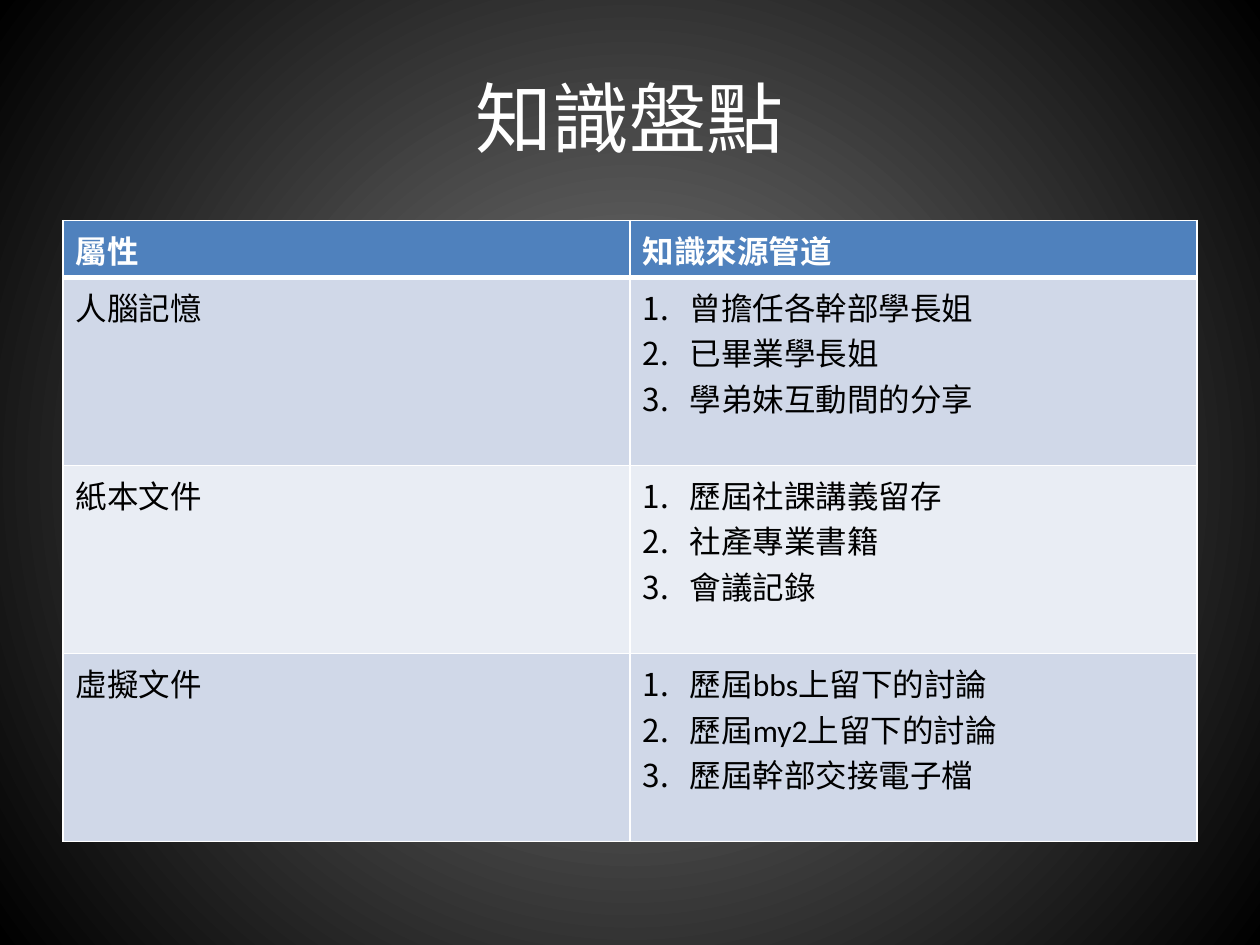
from lxml.etree import SubElement
from pptx import Presentation
from pptx.dml.color import RGBColor
from pptx.enum.text import MSO_ANCHOR as Anchor, PP_ALIGN as Align
from pptx.oxml import parse_xml
from pptx.oxml.ns import nsdecls, qn
from pptx.util import Pt

FONT = "Calibri"
WHITE, BLACK = "FFFFFF", "000000"
HEADER_FILL = "4F81BD"
BAND_FILLS = ["D0D8E8", "E9EDF4"]
HEADER_HEIGHT = 32.5
LIST_INDENT = 27

HEADERS = ["屬性", "知識來源管道"]
SOURCES = [
    ("人腦記憶", ["曾擔任各幹部學長姐", "已畢業學長姐", "學弟妹互動間的分享"]),
    ("紙本文件", ["歷屆社課講義留存", "社產專業書籍", "會議記錄"]),
    ("虛擬文件", ["歷屆bbs上留下的討論", "歷屆my2上留下的討論", "歷屆幹部交接電子檔"]),
]


def color(value):
    return RGBColor.from_string(value)


def add_run(paragraph, text, size, font_color, bold=False):
    run = paragraph.add_run()
    run.text = text
    run.font.name = FONT
    run.font.size = Pt(size)
    run.font.bold = bold
    run.font.color.rgb = color(font_color)


def set_background(slide, inner, outer):
    """Fill the background with a circular gradient from the centre."""
    background = parse_xml(
        f'<p:bg {nsdecls("p", "a")}><p:bgPr><a:gradFill rotWithShape="1"><a:gsLst>'
        f'<a:gs pos="0"><a:srgbClr val="{inner}"/></a:gs>'
        f'<a:gs pos="100000"><a:srgbClr val="{outer}"/></a:gs></a:gsLst>'
        '<a:path path="circle"><a:fillToRect l="50000" t="50000" r="50000" b="50000"/></a:path>'
        '</a:gradFill><a:effectLst/></p:bgPr></p:bg>'
    )
    slide.element.cSld.insert(0, background)


def add_title(slide, text, left, top, width, height):
    box = slide.shapes.add_textbox(Pt(left), Pt(top), Pt(width), Pt(height))
    frame = box.text_frame
    frame.word_wrap = True
    frame.vertical_anchor = Anchor.MIDDLE
    paragraph = frame.paragraphs[0]
    paragraph.alignment = Align.CENTER
    add_run(paragraph, text, 44, WHITE)


def set_borders(cell, top=1, bottom=1):
    properties = cell._tc.get_or_add_tcPr()
    for side, width in (("L", 1), ("R", 1), ("T", top), ("B", bottom)):
        line = SubElement(properties, qn(f"a:ln{side}"), w=str(Pt(width)))
        fill = SubElement(line, qn("a:solidFill"))
        SubElement(fill, qn("a:srgbClr"), val=WHITE)


def number_paragraph(paragraph):
    properties = paragraph._p.get_or_add_pPr()
    properties.set("marL", str(Pt(LIST_INDENT)))
    properties.set("indent", str(-Pt(LIST_INDENT)))
    SubElement(properties, qn("a:buFont"), typeface="+mj-lt")
    SubElement(properties, qn("a:buAutoNum"), type="arabicPeriod")


def fill_cell(cell, lines, fill, font_color, bold=False, numbered=False):
    cell.fill.solid()
    cell.fill.fore_color.rgb = color(fill)
    frame = cell.text_frame
    for index, line in enumerate(lines):
        paragraph = frame.add_paragraph() if index else frame.paragraphs[0]
        if numbered:
            number_paragraph(paragraph)
        add_run(paragraph, line, 18, font_color, bold)


def add_source_table(slide, left, top, width, height):
    row_count = len(SOURCES) + 1
    frame = slide.shapes.add_table(row_count, 2, Pt(left), Pt(top), Pt(width), Pt(height))
    table = frame.table
    table.rows[0].height = Pt(HEADER_HEIGHT)
    for cell, header in zip(table.rows[0].cells, HEADERS):
        set_borders(cell, bottom=3)
        fill_cell(cell, [header], HEADER_FILL, WHITE, bold=True)
    for index, (attribute, channels) in enumerate(SOURCES):
        row = table.rows[index + 1]
        row.height = Pt((height - HEADER_HEIGHT) / len(SOURCES))
        band = BAND_FILLS[index % 2]
        for cell in row.cells:
            set_borders(cell, top=1 if index else 3)
        fill_cell(row.cells[0], [attribute], band, BLACK)
        fill_cell(row.cells[1], channels, band, BLACK, numbered=True)


def main():
    presentation = Presentation()
    presentation.slide_width, presentation.slide_height = Pt(720), Pt(540)
    slide = presentation.slides.add_slide(presentation.slide_layouts[6])
    set_background(slide, "7F7F7F", BLACK)
    add_title(slide, "知識盤點", 36, 21.6, 648, 90)
    add_source_table(slide, 36, 126, 648, 355)
    presentation.save("out.pptx")


if __name__ == "__main__":
    main()
